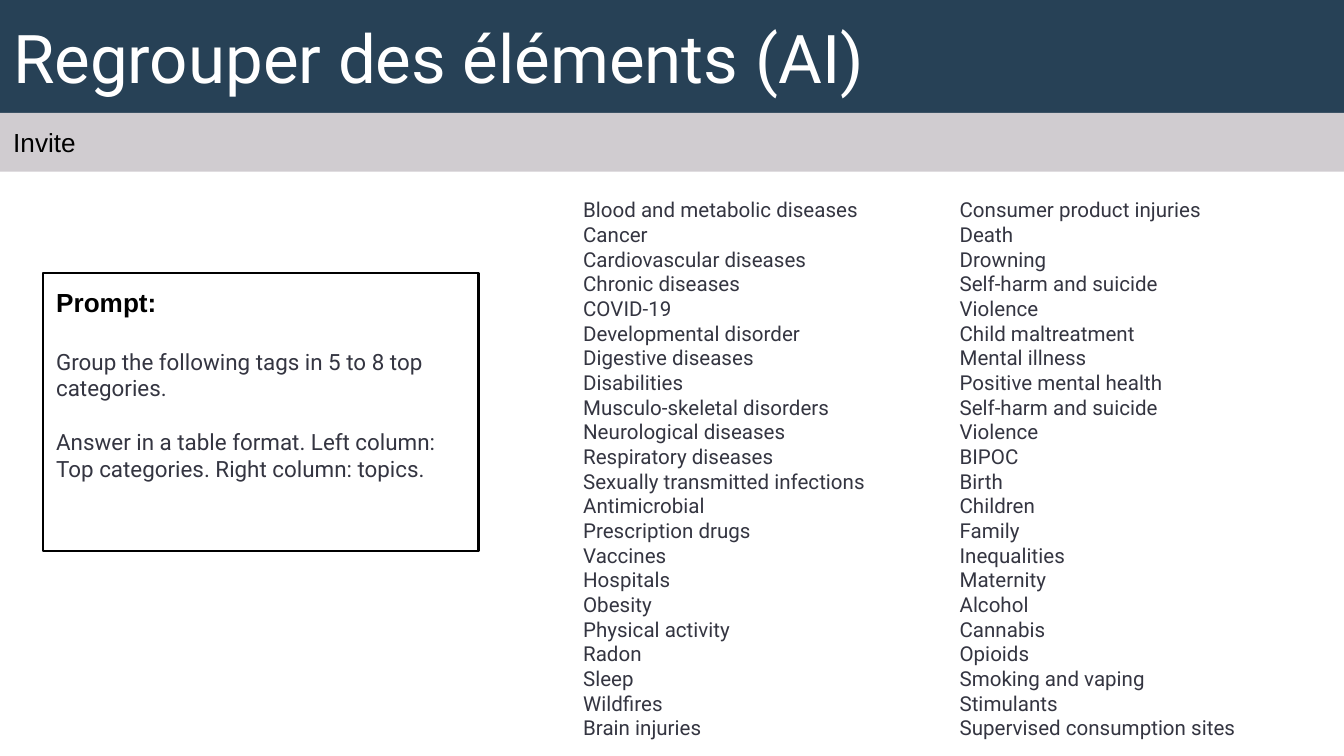
from pptx import Presentation
from pptx.dml.color import RGBColor
from pptx.enum.shapes import MSO_SHAPE
from pptx.enum.text import MSO_ANCHOR, PP_ALIGN
from pptx.util import Pt

RECT = MSO_SHAPE.RECTANGLE
TOP = MSO_ANCHOR.TOP
MIDDLE = MSO_ANCHOR.MIDDLE
LEFT = PP_ALIGN.LEFT

NAVY = RGBColor(0x27, 0x41, 0x56)
GREY = RGBColor(0xD0, 0xCC, 0xD0)
INK = RGBColor(0x34, 0x35, 0x41)
BLACK = RGBColor(0, 0, 0)
WHITE = RGBColor(255, 255, 255)

DISEASES = [
    "Blood and metabolic diseases", "Cancer", "Cardiovascular diseases",
    "Chronic diseases", "COVID-19", "Developmental disorder",
    "Digestive diseases", "Disabilities", "Musculo-skeletal disorders",
    "Neurological diseases", "Respiratory diseases",
    "Sexually transmitted infections", "Antimicrobial",
    "Prescription drugs", "Vaccines", "Hospitals", "Obesity",
    "Physical activity", "Radon", "Sleep", "Wildfires", "Brain injuries",
]
SOCIAL = [
    "Consumer product injuries", "Death", "Drowning",
    "Self-harm and suicide", "Violence", "Child maltreatment",
    "Mental illness", "Positive mental health", "Self-harm and suicide",
    "Violence", "BIPOC", "Birth", "Children", "Family", "Inequalities",
    "Maternity", "Alcohol", "Cannabis", "Opioids", "Smoking and vaping",
    "Stimulants", "Supervised consumption sites",
]


def set_frame(shape, anchor=TOP):
    frame = shape.text_frame
    frame.word_wrap = True
    frame.vertical_anchor = anchor
    frame.margin_left = frame.margin_right = Pt(7.2)
    frame.margin_top = frame.margin_bottom = Pt(7.2)
    return frame


def write(frame, text, size, color, face="Roboto", bold=False, gap=0):
    para = frame.paragraphs[0]
    if para.runs:
        para = frame.add_paragraph()
    para.add_run().text = text
    para.alignment = LEFT
    para.space_before = Pt(gap)
    font = para.font
    font.name, font.size, font.bold = face, Pt(size), bold
    font.color.rgb = color


def add_rect(slide, box, fill=None, line=None):
    shape = slide.shapes.add_shape(RECT, *map(Pt, box))
    shape.shadow.inherit = False
    if fill is None:
        shape.fill.background()
    else:
        shape.fill.solid()
        shape.fill.fore_color.rgb = fill
    if line is None:
        shape.line.fill.background()
    else:
        shape.line.color.rgb = line
        shape.line.width = Pt(1.5)
    return shape


def add_header(slide, box, title, label):
    left, top, width, height = box
    split = 60.5
    band = add_rect(slide, (left, top, width, split), NAVY)
    write(set_frame(band, MIDDLE), title, 36, WHITE)
    strip = add_rect(slide, (left, top + split, width, height - split), GREY)
    write(set_frame(strip), label, 14, BLACK, "Arial")


def add_prompt(slide, box):
    frame = set_frame(add_rect(slide, box, line=BLACK))
    write(frame, "Prompt:", 14, BLACK, "Arial", bold=True)
    write(frame, "Group the following tags in 5 to 8 top categories.",
          12, INK, gap=16)
    write(frame, "Answer in a table format. Left column: Top categories. "
          "Right column: topics.", 12, INK, gap=14.5)


def add_tags(slide, box, tags):
    frame = set_frame(slide.shapes.add_textbox(*map(Pt, box)))
    for tag in tags:
        write(frame, tag, 11, INK)


def main():
    deck = Presentation()
    deck.slide_width, deck.slide_height = Pt(720), Pt(405)
    slide = deck.slides.add_slide(deck.slide_layouts[6])
    add_header(slide, (0, 0, 720, 92), "Regrouper des éléments (AI)", "Invite")
    add_prompt(slide, (23, 146.3, 233.5, 149))
    add_tags(slide, (305.3, 98.6, 181.5, 308), DISEASES)
    add_tags(slide, (507, 98.6, 183, 324.7), SOCIAL)
    deck.save("out.pptx")


if __name__ == "__main__":
    main()
